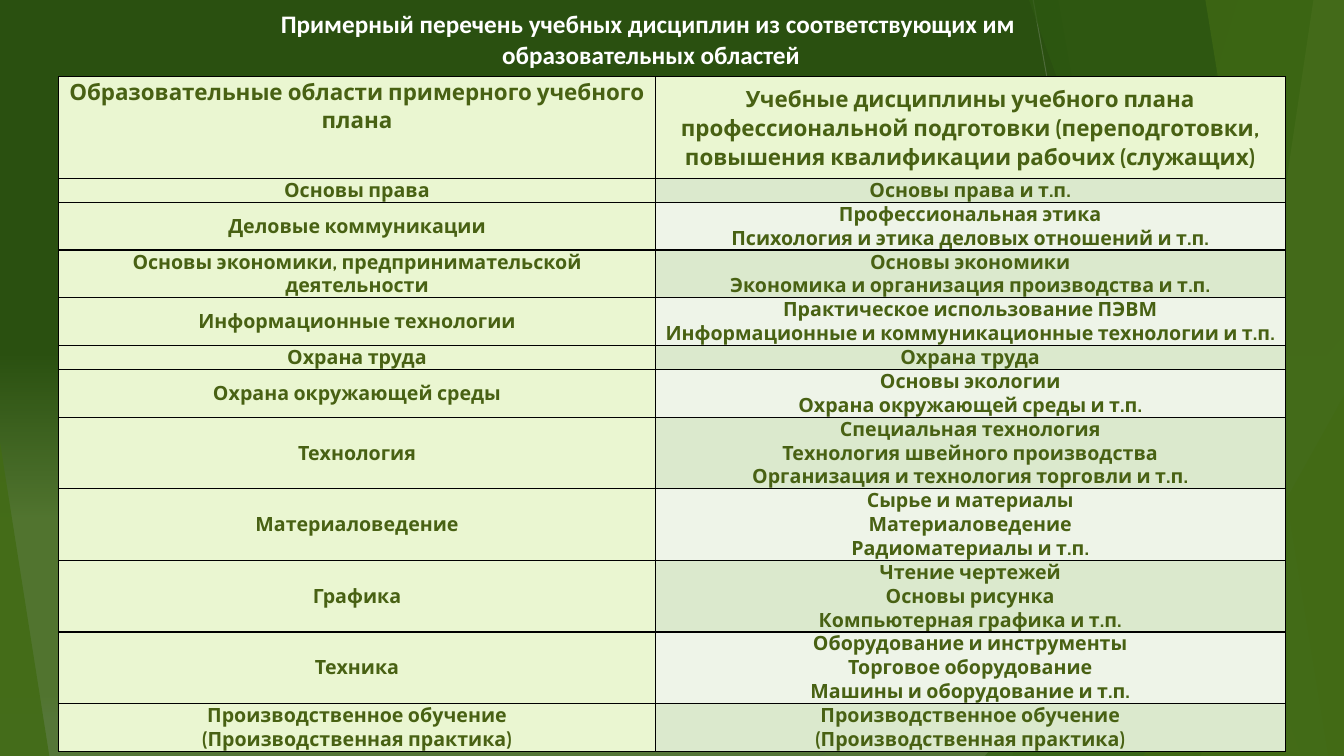
from copy import deepcopy

from lxml import etree
from pptx import Presentation
from pptx.dml.color import RGBColor
from pptx.enum.shapes import MSO_CONNECTOR, MSO_SHAPE
from pptx.enum.text import MSO_ANCHOR, PP_ALIGN
from pptx.oxml import parse_xml
from pptx.oxml.ns import nsdecls, qn
from pptx.util import Pt

PX = 9525
WIDTH, HEIGHT = 1280, 720
LINE_HEIGHT = 22
HEADER_HEIGHT = 97
COLUMN_WIDTHS = (568, 600)
TITLE_ONLY = 5
STRAIGHT = MSO_CONNECTOR.STRAIGHT
TRIANGLE, RECTANGLE = MSO_SHAPE.ISOSCELES_TRIANGLE, MSO_SHAPE.RECTANGLE
TOP, MIDDLE = MSO_ANCHOR.TOP, MSO_ANCHOR.MIDDLE
CENTER = PP_ALIGN.CENTER

DARK_GREEN, TEXT_GREEN, LIME = "2A5010", "486113", "90C226"
PALE, BANDS = "EAF6D1", ("DBE9CD", "EEF4E8")
BACKGROUND_STOPS = ((46, DARK_GREEN), (69, "D0EB96"), (92, "D0EB96"), (95, "DFF1B9"))

RAYS = (
    ((984, 0, 1112, 720), "BFBFBF"),
    ((1280, 387, 780, 720), "D9D9D9"),
)
BACK_FACETS = ((1179, 964, LIME, 30), (1008, 1136, LIME, 20))
FRONT_FACETS = (
    (980, 1239, "3F7819", 70),
    (1251, 1144, "C0E474", 70),
    (1148, 1265, LIME, 65),
)

TITLE = (
    "Примерный перечень учебных дисциплин из соответствующих им ",
    "образовательных областей",
)
HEADERS = (
    "Образовательные области примерного учебного плана",
    "Учебные дисциплины учебного плана профессиональной подготовки "
    "(переподготовки, повышения квалификации рабочих (служащих)",
)
PRACTICE = ("Производственное обучение", "(Производственная практика)")
SUBJECTS = (
    (("Основы права",), ("Основы права и т.п.",)),
    (("Деловые коммуникации",),
     ("Профессиональная этика", "Психология и этика деловых отношений и т.п.")),
    (("Основы экономики, предпринимательской деятельности",),
     ("Основы экономики", "Экономика и организация производства и т.п.")),
    (("Информационные технологии",),
     ("Практическое использование ПЭВМ",
      "Информационные и коммуникационные технологии и т.п.")),
    (("Охрана труда",), ("Охрана труда",)),
    (("Охрана окружающей среды",),
     ("Основы экологии", "Охрана окружающей среды и т.п.")),
    (("Технология",),
     ("Специальная технология", "Технология швейного производства",
      "Организация и технология торговли и т.п.")),
    (("Материаловедение",),
     ("Сырье и материалы", "Материаловедение", "Радиоматериалы и т.п.")),
    (("Графика",),
     ("Чтение чертежей", "Основы рисунка", "Компьютерная графика и т.п.")),
    (("Техника",),
     ("Оборудование и инструменты", "Торговое оборудование",
      "Машины и оборудование и т.п.")),
    (PRACTICE, PRACTICE),
)


def px(*lengths):
    """Turn pixel lengths into EMU."""
    return [length * PX for length in lengths]


def color(value):
    """Turn a hex string into a colour."""
    return RGBColor.from_string(value)


def write(frame, lines, size=14, font="Cabin", ink=TEXT_GREEN, spacing=None):
    """Fill a text frame with centred bold paragraphs."""
    frame.word_wrap = True
    for index, line in enumerate(lines):
        para = frame.add_paragraph() if index else frame.paragraphs[0]
        para.alignment = CENTER
        para.line_spacing = spacing
        span = para.add_run()
        span.text = line
        span.font.size, span.font.name, span.font.bold = Pt(size), font, True
        span.font.color.rgb = color(ink)


def paint(shape, fill, opacity):
    """Give a shape a translucent fill without line or shadow."""
    shape.shadow.inherit = False
    shape.line.fill.background()
    shape.fill.solid()
    shape.fill.fore_color.rgb = color(fill)
    tint = shape.element.spPr.find(f"{qn('a:solidFill')}/{qn('a:srgbClr')}")
    etree.SubElement(tint, qn("a:alpha"), val=str(opacity * 1000))


def add_preset(page, kind, bounds, fill, opacity, apex=None):
    """Add a translucent preset shape."""
    shape = page.shapes.add_shape(kind, *px(*bounds))
    if apex is not None:
        shape.adjustments[0] = apex
    paint(shape, fill, opacity)


def add_facet(page, top, bottom, fill, opacity):
    """Add a slanted panel reaching the right edge of the slide."""
    builder = page.shapes.build_freeform(top, 0, scale=PX)
    builder.add_line_segments(((WIDTH, 0), (WIDTH, HEIGHT), (bottom, HEIGHT)), close=True)
    paint(builder.convert_to_shape(), fill, opacity)


def add_ray(page, ends, ink):
    """Add a thin straight line."""
    ray = page.shapes.add_connector(STRAIGHT, *px(*ends))
    ray.line.width = Pt(0.75)
    ray.line.color.rgb = color(ink)
    etree.SubElement(ray.element.spPr, qn("a:effectLst"))


def set_background(page):
    """Paint the vertical background gradient."""
    fill = page.background.fill
    fill.gradient()
    fill.gradient_angle = 270
    stop_list = page.element.xpath(".//p:bg//a:gsLst")[0]
    for _ in range(len(BACKGROUND_STOPS) - len(stop_list)):
        stop_list.append(deepcopy(stop_list[0]))
    for stop, (percent, value) in zip(fill.gradient_stops, BACKGROUND_STOPS):
        stop.position = percent / 100
        stop.color.rgb = color(value)


def add_decor(page):
    """Add the lines, panels and dark overlays behind the content."""
    for ends, ink in RAYS:
        add_ray(page, ends, ink)
    for facet in BACK_FACETS:
        add_facet(page, *facet)
    add_preset(page, TRIANGLE, (938, 320, 342, 400), "54A021", 72, apex=1)
    for facet in FRONT_FACETS:
        add_facet(page, *facet)
    add_preset(page, TRIANGLE, (1089, 377, 191, 343), LIME, 80, apex=1)
    add_preset(page, TRIANGLE, (0, 421, 47, 299), LIME, 85, apex=0)
    for _ in range(2):
        add_preset(page, RECTANGLE, (0, 0, WIDTH, HEIGHT), DARK_GREEN, 51)


def fill_cell(cell, lines, fill, anchor=MIDDLE, **style):
    """Write a table cell with its fill, margins and black borders."""
    cell.margin_left = cell.margin_right = 4 * PX
    cell.margin_top = cell.margin_bottom = 0
    cell.vertical_anchor = anchor
    cell.fill.solid()
    cell.fill.fore_color.rgb = color(fill)
    properties = cell._tc.get_or_add_tcPr()
    for index, side in enumerate("LRTB"):
        properties.insert(index, parse_xml(
            f'<a:ln{side} {nsdecls("a")} w="12700"><a:solidFill>'
            f'<a:srgbClr val="000000"/></a:solidFill></a:ln{side}>'))
    write(cell.text_frame, lines, **style)


def add_subject_table(page):
    """Add the table of areas and disciplines."""
    heights = [HEADER_HEIGHT] + [
        LINE_HEIGHT * len(disciplines) for _, disciplines in SUBJECTS]
    bounds = px(56, 73, sum(COLUMN_WIDTHS), sum(heights))
    table = page.shapes.add_table(len(heights), len(COLUMN_WIDTHS), *bounds).table
    table.first_row = table.horz_banding = False
    for column, width in zip(table.columns, COLUMN_WIDTHS):
        column.width = width * PX
    for row, height in zip(table.rows, heights):
        row.height = height * PX
    for index, (header, anchor) in enumerate(zip(HEADERS, (TOP, MIDDLE))):
        fill_cell(table.cell(0, index), [header], PALE, anchor, size=16, spacing=1.07)
    for index, (area, disciplines) in enumerate(SUBJECTS):
        fill_cell(table.cell(index + 1, 0), area, PALE)
        fill_cell(table.cell(index + 1, 1), disciplines, BANDS[index % 2], TOP)


def place_title(page):
    """Place the title in front of the overlays."""
    title = page.shapes.title
    title.left, title.top, title.width, title.height = px(0, 3, 1240, 68)
    title.text_frame.vertical_anchor = MIDDLE
    write(title.text_frame, TITLE, size=18, font="Calibri", ink="FFFFFF")
    page.shapes.element.append(title.element)


def main():
    """Build and save the slide."""
    deck = Presentation()
    deck.slide_width, deck.slide_height = px(WIDTH, HEIGHT)
    page = deck.slides.add_slide(deck.slide_layouts[TITLE_ONLY])
    set_background(page)
    add_decor(page)
    add_subject_table(page)
    place_title(page)
    deck.save("out.pptx")


if __name__ == "__main__":
    main()
